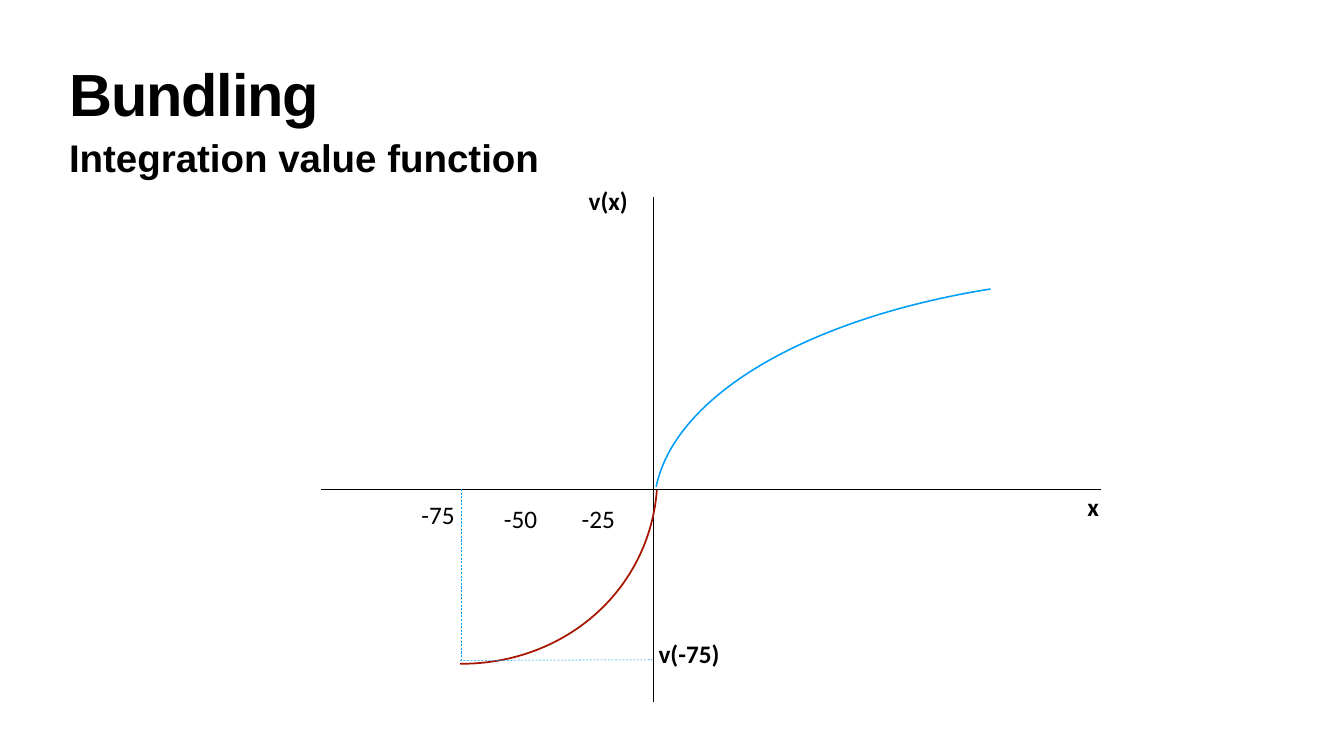
from lxml.etree import SubElement
from pptx import Presentation
from pptx.dml.color import RGBColor
from pptx.enum.dml import MSO_LINE
from pptx.enum.shapes import MSO_CONNECTOR, MSO_SHAPE
from pptx.enum.text import MSO_ANCHOR as Anchor, MSO_AUTO_SIZE as AutoSize, PP_ALIGN as Align
from pptx.oxml.ns import qn
from pptx.util import Pt

BLACK, BLUE, RED = "000000", "009EF9", "A61500"


def colour(value):
    return RGBColor.from_string(value)


def place(shape, box):
    shape.left, shape.top, shape.width, shape.height = map(Pt, box)


def write(para, text, size, font, bold=False):
    span = para.add_run()
    span.text = text
    span.font.size = Pt(size)
    span.font.name = font
    span.font.bold = bold
    span.font.color.rgb = colour(BLACK)
    return span


def fill_heading(holder, box, text, size, inset, anchor):
    place(holder, box)
    frame = holder.text_frame
    frame.auto_size = AutoSize.NONE
    frame.word_wrap = True
    frame.vertical_anchor = anchor
    frame.margin_left = frame.margin_right = Pt(inset)
    frame.margin_top = frame.margin_bottom = Pt(inset)
    para = frame.paragraphs[0]
    para.alignment = Align.LEFT
    para.space_before = Pt(0)
    return para, write(para, text, size, "Arial", True)


def add_title(page, box):
    para, span = fill_heading(page.shapes.title, box, "Bundling", 85, 4.3, Anchor.MIDDLE)
    para.line_spacing = 0.8
    span.font._element.set("spc", "-170")


def add_subtitle(page, box):
    para, span = fill_heading(page.placeholders[1], box, "Integration value function",
                              55, 3.6, Anchor.MIDDLE)
    properties = para._p.get_or_add_pPr()
    properties.set("marL", "0")
    properties.set("indent", "0")
    SubElement(properties, qn("a:buNone"))


def add_line(page, start, end, tone=BLACK, dash=None):
    line = page.shapes.add_connector(MSO_CONNECTOR.STRAIGHT, *map(Pt, start + end))
    line.line.color.rgb = colour(tone)
    line.line.width = Pt(0.75)
    if dash:
        line.line.dash_style = dash
    SubElement(line._element.spPr, qn("a:effectLst"))


def add_curve(page, box, rotation, angles, tone, weight):
    curve = page.shapes.add_shape(MSO_SHAPE.ARC, *map(Pt, box))
    curve.rotation = rotation
    curve.adjustments[0], curve.adjustments[1] = angles
    curve.shadow.inherit = False
    curve.fill.background()
    curve.line.color.rgb = colour(tone)
    curve.line.width = Pt(weight)


def add_label(page, box, text, bold=False):
    frame = page.shapes.add_textbox(*map(Pt, box)).text_frame
    frame.word_wrap = not bold
    frame.auto_size = AutoSize.SHAPE_TO_FIT_TEXT
    write(frame.paragraphs[0], text, 36, "Calibri", bold)


def add_value_graph(page, box):
    left, top, width, height = box
    right, bottom = left + width, top + height
    origin_x, origin_y = left + 475, top + 417
    loss_x, loss_y = left + 200, origin_y + 244

    add_line(page, (origin_x, top), (origin_x, bottom))
    add_line(page, (right, origin_y), (left, origin_y))
    add_label(page, (origin_x - 100, top - 21, 71, 51), "v(x)", True)
    add_label(page, (right - 26, origin_y, 31, 51), "x", True)

    add_curve(page, (origin_x + 380, top - 266.5, 665.5, 1425), 270,
              (163.56, 194.2), BLUE, 2.25)
    add_curve(page, (origin_x - 569.5, top + 84.3, 559, 598), 116.3,
              (150.28, 198.6), RED, 2.5)

    for text, offset, drop in (("-25", -110, 16.5), ("-50", -221, 17), ("-75", -339, 11)):
        add_label(page, (origin_x + offset, origin_y + drop, 91, 51), text)

    add_line(page, (loss_x, origin_y), (loss_x, loss_y), BLUE, MSO_LINE.DASH)
    add_line(page, (loss_x - 2, loss_y + 1), (origin_x - 2, loss_y), BLUE, MSO_LINE.DASH)
    add_label(page, (origin_x, loss_y - 34, 102, 51), "v(-75)", True)


def main():
    deck = Presentation()
    deck.slide_width, deck.slide_height = Pt(1920), Pt(1080)
    page = deck.slides.add_slide(deck.slide_layouts[1])
    add_title(page, (95, 85, 1730, 113))
    add_subtitle(page, (95, 187, 1730, 73.5))
    add_value_graph(page, (458.8, 281.5, 1113.6, 721))
    deck.save("out.pptx")


if __name__ == "__main__":
    main()
